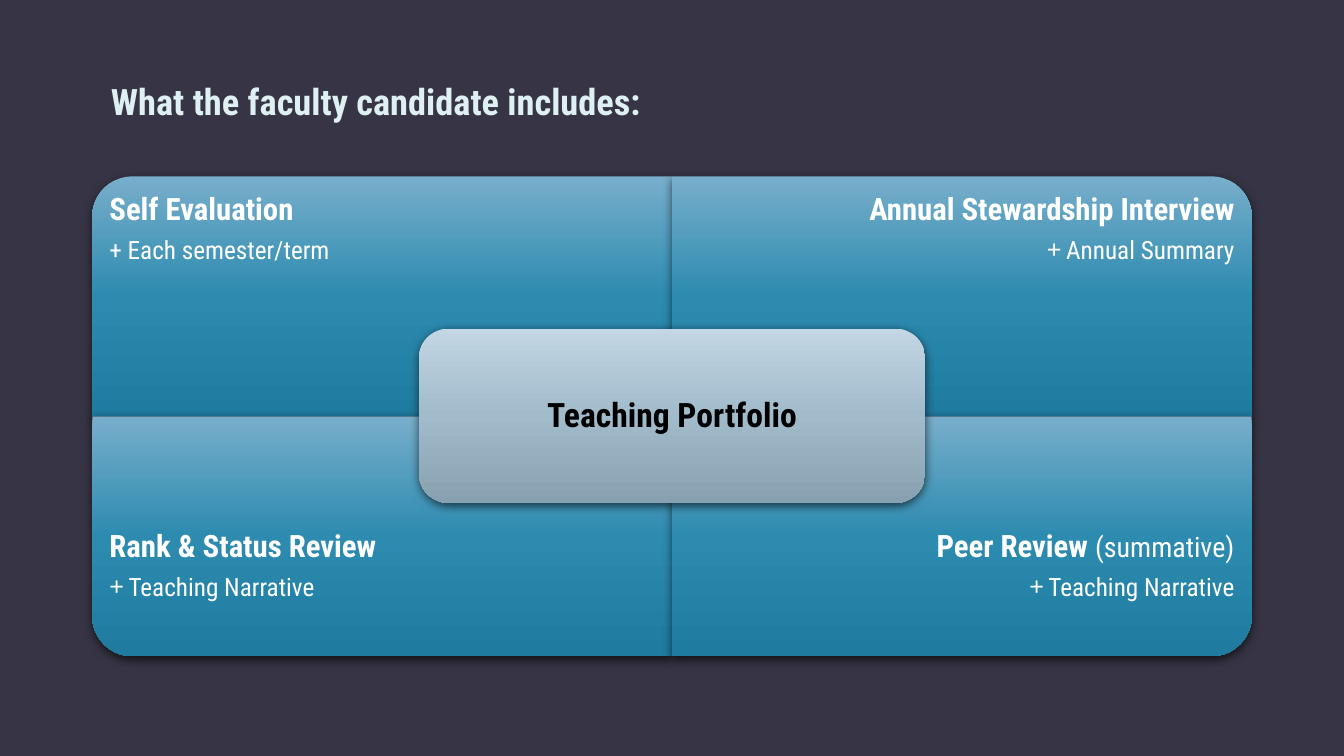
from math import cos, pi, sin

from lxml import etree
from pptx import Presentation
from pptx.dml.color import RGBColor
from pptx.enum.shapes import MSO_SHAPE
from pptx.enum.text import MSO_ANCHOR, PP_ALIGN
from pptx.oxml import parse_xml
from pptx.oxml.ns import nsdecls, qn
from pptx.util import Inches, Pt

LEFT, MID, RIGHT = PP_ALIGN.LEFT, PP_ALIGN.CENTER, PP_ALIGN.RIGHT
TOP, MIDDLE = MSO_ANCHOR.TOP, MSO_ANCHOR.MIDDLE
FONT = "Roboto Condensed"
DARK = RGBColor(0x37, 0x35, 0x45)
PALE = RGBColor(0xDE, 0xF0, 0xF2)
WHITE = RGBColor(0xFF, 0xFF, 0xFF)
BLACK = RGBColor(0x00, 0x00, 0x00)
BLUES = [RGBColor(0x78, 0xAE, 0xCB), RGBColor(0x2D, 0x8B, 0xB0), RGBColor(0x1F, 0x7B, 0xA0)]
GREYS = [RGBColor(0xC2, 0xD6, 0xE3), RGBColor(0xA1, 0xBB, 0xCB), RGBColor(0x88, 0xA1, 0xB1)]


def style(shape, tints):
    """Give the shape a top-down gradient, no outline and a soft shadow."""
    shape.line.fill.background()
    stops = "".join(
        f'<a:gs pos="{n * 50000}"><a:srgbClr val="{tint}"/></a:gs>'
        for n, tint in enumerate(tints)
    )
    props = shape._element.spPr
    props.find(qn("a:ln")).addprevious(parse_xml(
        f'<a:gradFill {nsdecls("a")} rotWithShape="1"><a:gsLst>{stops}</a:gsLst>'
        '<a:lin ang="5400000" scaled="0"/></a:gradFill>'))
    shape.shadow.inherit = False
    props.find(qn("a:effectLst")).append(parse_xml(
        f'<a:outerShdw {nsdecls("a")} blurRad="{Pt(7)}" dist="{Pt(2.2)}" dir="5400000" '
        'algn="ctr" rotWithShape="0"><a:srgbClr val="000000">'
        '<a:alpha val="63000"/></a:srgbClr></a:outerShdw>'))


def write(para, text, size, bold=False, color=WHITE, align=LEFT, line=0.9, after=0, bullet=None):
    para.alignment = align
    para.line_spacing = line
    para.space_after = Pt(after)
    if bullet:
        para.level = 1
        props = para._p.get_or_add_pPr()
        props.set("marL", str(Inches(0.19)))
        props.set("indent", str(Inches(-0.19)))
        etree.SubElement(props, qn("a:buFont")).set("typeface", "Arial")
        etree.SubElement(props, qn("a:buChar")).set("char", bullet)
    run = para.add_run()
    run.text = text
    run.font.name = FONT
    run.font.size = Pt(size)
    run.font.bold = bold
    run.font.color.rgb = color


deck = Presentation()
deck.slide_width, deck.slide_height = Inches(13.33), Inches(7.5)
slide = deck.slides.add_slide(deck.slide_layouts[5])
slide.background.fill.solid()
slide.background.fill.fore_color.rgb = DARK

# Four quadrants, each with its outer corner rounded
MID_X, MID_Y, WIDE, HIGH, ROUND = 13.33 / 2, 4.13, 5.75, 2.38, 0.4
STEPS = 24
quads = [
    (-1, -1, "Self Evaluation", "", "+ Each semester/term", None),
    (1, -1, "Annual Stewardship Interview", "", "Annual Summary", "+"),
    (-1, 1, "Rank & Status Review", "", "Teaching Narrative", "+"),
    (1, 1, "Peer Review ", "(summative)", "Teaching Narrative", "+"),
]
for side, level, head, note, detail, bullet in quads:
    edge_x, edge_y = MID_X + side * WIDE, MID_Y + level * HIGH
    hub_x, hub_y = edge_x - side * ROUND, edge_y - level * ROUND
    turns = [n * pi / 2 / STEPS for n in range(STEPS + 1)]
    arc = [(hub_x + side * ROUND * sin(t), hub_y + level * ROUND * cos(t)) for t in turns]
    points = [(MID_X, edge_y), *arc, (edge_x, MID_Y)]
    pen = slide.shapes.build_freeform(Inches(MID_X), Inches(MID_Y))
    pen.add_line_segments([(Inches(x), Inches(y)) for x, y in points], close=True)
    quad = pen.convert_to_shape()
    style(quad, BLUES)

    frame = quad.text_frame
    frame.word_wrap = True
    frame.margin_left = frame.margin_right = Inches(0.17)
    frame.margin_top = Inches(0.17 if level < 0 else 0.77)
    frame.margin_bottom = Inches(0.77 if level < 0 else 0.17)
    frame.vertical_anchor = TOP if level < 0 else MIDDLE
    align = LEFT if side < 0 else RIGHT
    first = frame.paragraphs[0]
    write(first, head, 22, bold=True, align=align, after=7.7)
    if note:
        write(first, note, 20, align=align, after=7.7)
    write(frame.add_paragraph(), detail, 18, align=align, after=2.7, bullet=bullet)

# Centre panel
panel = slide.shapes.add_shape(
    MSO_SHAPE.ROUNDED_RECTANGLE, Inches(MID_X - 2.51), Inches(3.26), Inches(5.02), Inches(1.73))
panel.adjustments[0] = 0.17
style(panel, GREYS)
panel.text_frame.word_wrap = True
panel.text_frame.vertical_anchor = MIDDLE
panel.text_frame.margin_top = Inches(0.07)
write(panel.text_frame.paragraphs[0], "Teaching Portfolio", 24, bold=True, color=BLACK, align=MID)

# Title
title = slide.shapes.title
title.left, title.top = Inches(0.92), Inches(0.73)
title.width, title.height = Inches(8.82), Inches(0.54)
title.text_frame.margin_left = Inches(0.18)
title.text_frame.vertical_anchor = MIDDLE
write(title.text_frame.paragraphs[0], "What the faculty candidate includes:", 26,
      bold=True, color=PALE, line=1.0)

deck.save("out.pptx")
